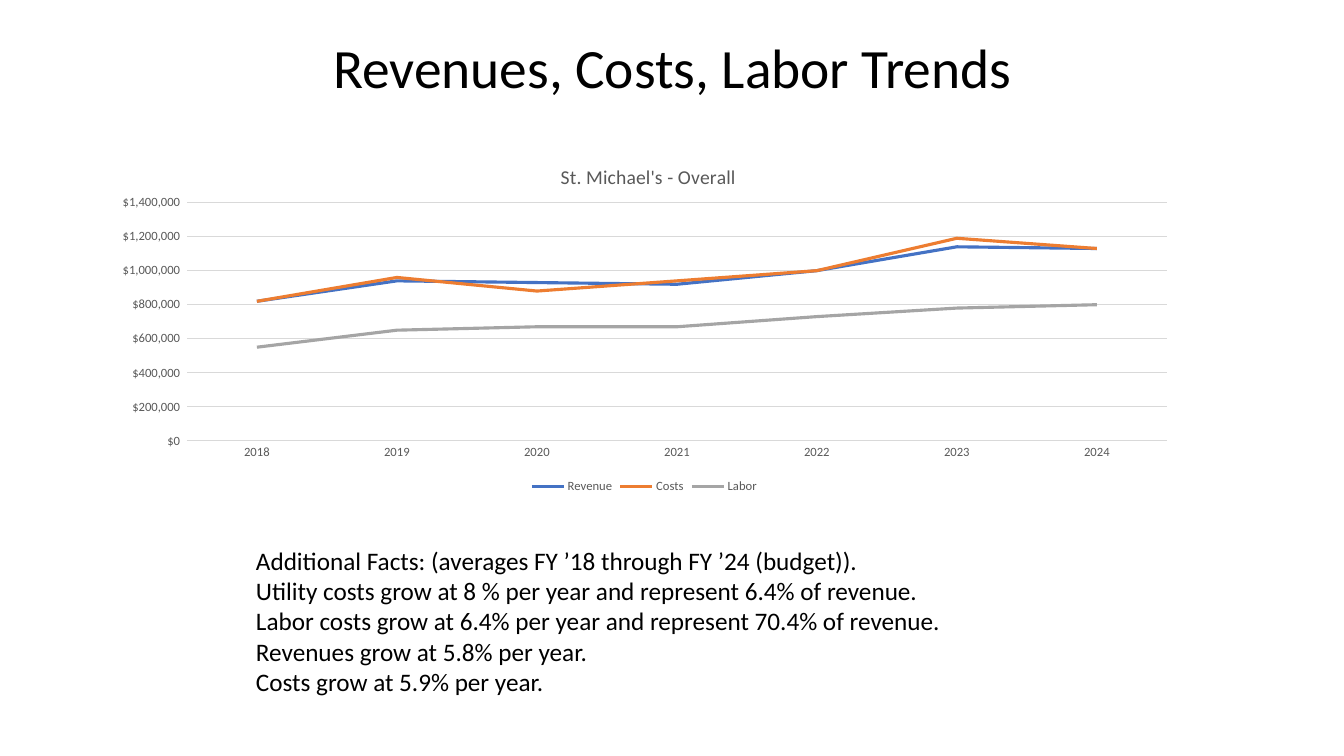
"""Build a slide with a line chart of revenue, costs and labor and a list of facts."""
import pptx
import pptx.chart.data
import pptx.dml.color
import pptx.enum.chart
import pptx.enum.text
import pptx.oxml
import pptx.util
from pptx.oxml.ns import qn

Inches = pptx.util.Inches
Pt = pptx.util.Pt
enum = pptx.enum.chart

FONT = "Calibri"
BLACK, GREY, RULE = "000000", "595959", "D9D9D9"
HEAD = "Revenues, Costs, Labor Trends"
NAME = "St. Michael's - Overall"
YEARS = ["2018", "2019", "2020", "2021", "2022", "2023", "2024"]
LINES = [
    ("Revenue", "4472C4", (820000, 940000, 930000, 920000, 1000000, 1140000, 1130000)),
    ("Costs", "ED7D31", (820000, 960000, 880000, 940000, 1000000, 1190000, 1130000)),
    ("Labor", "A5A5A5", (550000, 650000, 670000, 670000, 730000, 780000, 800000)),
]
FACTS = [
    "Additional Facts: (averages FY ’18 through FY ’24 (budget)).",
    "Utility costs grow at 8 % per year and represent 6.4% of revenue.",
    "Labor costs grow at 6.4% per year and represent 70.4% of revenue.",
    "Revenues grow at 5.8% per year.",
    "Costs grow at 5.9% per year.",
]
MONEY = r'"$"#,##0_);\("$"#,##0\)'
HEAD_BOX = (0.92, 0.4, 11.5, 0.59)
PLOT_BOX = (0.99, 1.41, 10.8, 3.53)
FACT_BOX = (2.44, 5.36, 9.19, 1.62)


def tint(item, code):
    item.rgb = pptx.dml.color.RGBColor.from_string(code)


def style(font, size, code):
    font.name, font.size, font.bold = FONT, Pt(size), False
    tint(font.color, code)


def stroke(line, code, width):
    line.width = Pt(width)
    line.fill.solid()
    tint(line.fill.fore_color, code)


def write(slide, box, rows, size, align, anchor, space):
    frame = slide.shapes.add_textbox(*map(Inches, box)).text_frame
    frame.word_wrap = True
    frame.vertical_anchor = anchor
    for i, row in enumerate(rows):
        para = frame.paragraphs[0] if i == 0 else frame.add_paragraph()
        para.alignment, para.line_spacing = align, space
        run = para.add_run()
        run.text = row
        style(run.font, size, BLACK)


def place(node, spot, **parts):
    for old in node.findall(qn("c:layout")):
        node.remove(old)
    layout = pptx.oxml.parse_xml(
        '<c:layout xmlns:c="http://schemas.openxmlformats.org/drawingml/2006/chart">'
        "<c:manualLayout/></c:layout>")
    for tag, val in parts.items():
        layout[0].makeelement(qn("c:" + tag))
        item = pptx.oxml.parse_xml(
            f'<c:{tag} xmlns:c="http://schemas.openxmlformats.org/drawingml/2006/chart" val="{val}"/>')
        layout[0].append(item)
    node.insert(spot, layout)


def draw(slide):
    data = pptx.chart.data.CategoryChartData(number_format=MONEY)
    data.categories = YEARS
    for name, code, vals in LINES:
        data.add_series(name, vals)
    chart = slide.shapes.add_chart(
        enum.XL_CHART_TYPE.LINE, *map(Inches, PLOT_BOX), data).chart
    style(chart.font, 10, BLACK)

    chart.has_title = True
    run = chart.chart_title.text_frame.paragraphs[0].add_run()
    run.text = NAME
    style(run.font, 14, GREY)
    chart.chart_title.include_in_layout = False

    for line, (name, code, vals) in zip(chart.plots[0].series, LINES):
        line.smooth = False
        stroke(line.format.line, code, 2.25)
    chart.plots[0].vary_by_categories = False

    years, money = chart.category_axis, chart.value_axis
    for axis in (years, money):
        axis.major_tick_mark = axis.minor_tick_mark = enum.XL_TICK_MARK.NONE
        style(axis.tick_labels.font, 9, GREY)
    stroke(years.format.line, RULE, 0.75)
    money.format.line.fill.background()
    stroke(money.major_gridlines.format.line, RULE, 0.75)
    money.minimum_scale, money.maximum_scale, money.major_unit = 0, 1400000, 200000
    money.tick_labels.number_format = MONEY
    money.tick_labels.number_format_is_linked = False

    chart.has_legend = True
    chart.legend.position = enum.XL_LEGEND_POSITION.BOTTOM
    chart.legend.include_in_layout = False
    style(chart.legend.font, 9, GREY)

    root = chart.element
    place(root.find(".//" + qn("c:title")), 1,
          xMode="edge", yMode="edge", x=0.42, y=0.05)
    place(root.find(".//" + qn("c:plotArea")), 0, layoutTarget="inner",
          xMode="edge", yMode="edge", x=0.08, y=0.17, w=0.9, h=0.67)


def main():
    deck = pptx.Presentation()
    deck.slide_width, deck.slide_height = Inches(13.33), Inches(7.5)
    slide = deck.slides.add_slide(deck.slide_layouts[6])
    align, anchor = pptx.enum.text.PP_ALIGN, pptx.enum.text.MSO_ANCHOR
    write(slide, HEAD_BOX, [HEAD], 39.6, align.CENTER, anchor.MIDDLE, 0.9)
    draw(slide)
    write(slide, FACT_BOX, FACTS, 18, align.LEFT, anchor.TOP, 1.0)
    deck.save("out.pptx")


if __name__ == "__main__":
    main()
